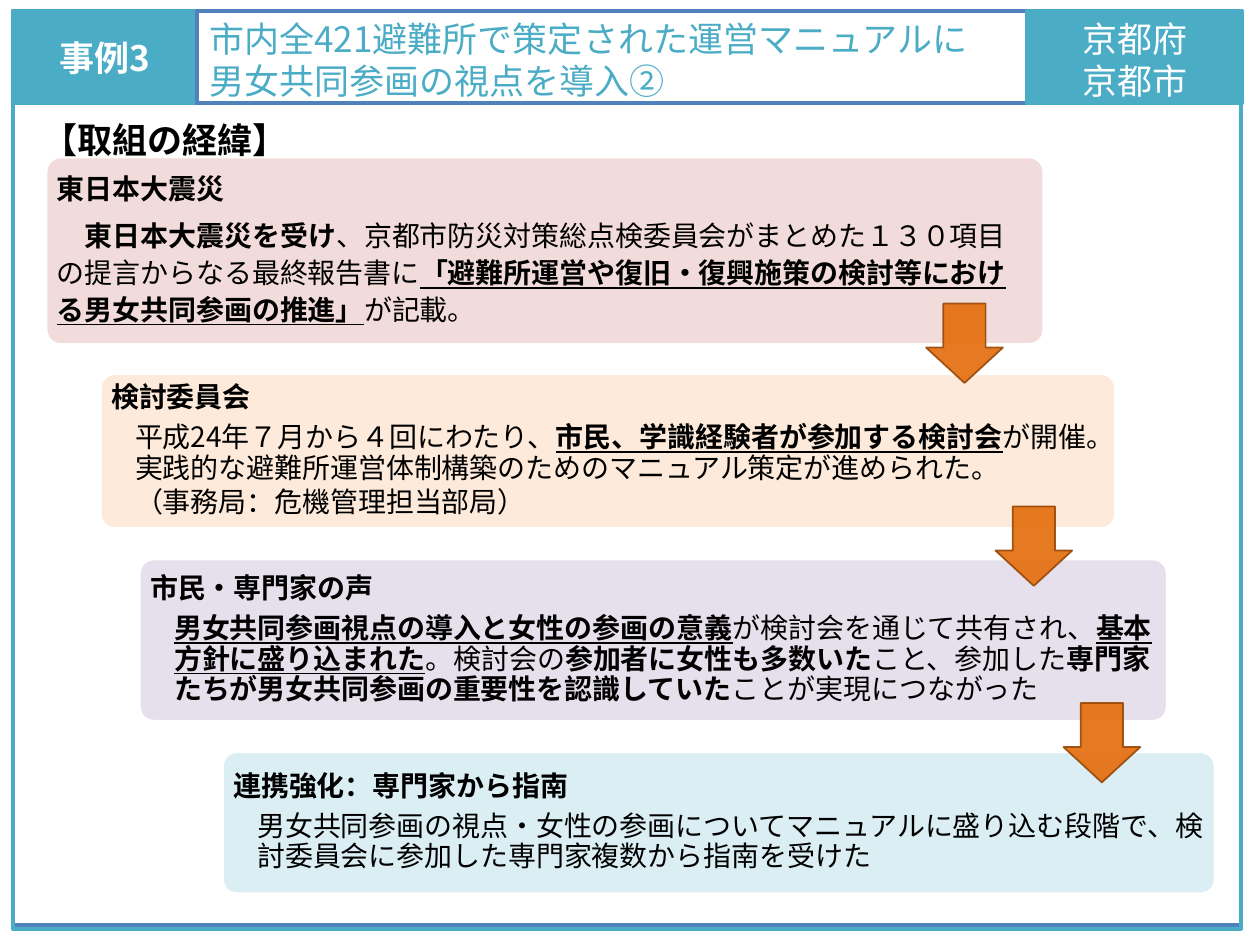
import pptx
import pptx.util
import pptx.dml.color
import pptx.enum.shapes
import pptx.enum.text
import pptx.oxml
import pptx.oxml.ns

FONT = "Noto Sans CJK JP"
COLORS = {
    "teal": "4BACC6", "blue": "4F81BD", "white": "FFFFFF", "black": "000000",
    "pink": "F2DCDB", "peach": "FDEADA", "lilac": "E6E0EC", "aqua": "DBEEF4",
    "orange": "E46C0A", "brown": "984807",
}
SHAPES = pptx.enum.shapes.MSO_SHAPE
ALIGN = pptx.enum.text.PP_ALIGN
MIDDLE = pptx.enum.text.MSO_ANCHOR.MIDDLE

# Each stage: place in grid cells, fill, heading, body paragraphs.
# A span is (text, style), where b is bold and u is underlined.
STAGES = [
    ((3.7, 12.5, 79.1, 14.8), "pink", "東日本大震災", [
        [("東日本大震災を受け", "b"),
         ("、京都市防災対策総点検委員会がまとめた１３０項目の提言からなる最終報告書に", ""),
         ("「避難所運営や復旧・復興施策の検討等における男女共同参画の推進」", "bu"),
         ("が記載。", "")]]),
    ((8, 29.7, 80.5, 12.2), "peach", "検討委員会", [
        [("平成24年７月から４回にわたり、", ""),
         ("市民、学識経験者が参加する検討会", "bu"),
         ("が開催。実践的な避難所運営体制構築のためのマニュアル策定が進められた。", "")],
        [("（事務局：危機管理担当部局）", "")]]),
    ((11.1, 44.4, 81.5, 12.8), "lilac", "市民・専門家の声", [
        [("男女共同参画視点の導入と女性の参画の意義", "bu"),
         ("が検討会を通じて共有され、", ""),
         ("基本方針に盛り込まれた", "bu"),
         ("。検討会の", ""),
         ("参加者に女性も多数いた", "b"),
         ("こと、参加した", ""),
         ("専門家たちが男女共同参画の重要性を認識していた", "b"),
         ("ことが実現につながった", "")]]),
    ((17.7, 59.7, 78.7, 11.2), "aqua", "連携強化：専門家から指南", [
        [("男女共同参画の視点・女性の参画についてマニュアルに盛り込む段階で、"
          "検討委員会に参加した専門家複数から指南を受けた", "")]]),
]
ARROWS = [(73.5, 24.1), (79, 40.2), (84.4, 55.8)]


def cells(*counts):
    """Lengths on a grid of 100 columns by 75 rows."""
    return [pptx.util.Inches(count / 10) for count in counts]


def rgb(name):
    return pptx.dml.color.RGBColor.from_string(COLORS[name])


def style_span(span, size, color, style=""):
    font = span.font
    font.name, font.size = FONT, pptx.util.Pt(size)
    font.color.rgb = rgb(color)
    font.bold, font.underline = "b" in style, "u" in style
    east = pptx.oxml.parse_xml(
        f'<a:ea {pptx.oxml.ns.nsdecls("a")} typeface="{FONT}"/>')
    font._element.find(pptx.oxml.ns.qn("a:latin")).addnext(east)


def paint(shape, fill, line, width):
    if fill:
        shape.fill.solid()
        shape.fill.fore_color.rgb = rgb(fill)
    else:
        shape.fill.background()
    shape.line.color.rgb = rgb(line)
    shape.line.width = pptx.util.Pt(width)


def add_shape(page, kind, place, fill, line, width=2.25):
    shape = page.shapes.add_shape(kind, *cells(*place))
    shape.shadow.inherit = False
    paint(shape, fill, line, width)
    return shape


def set_margins(frame, left, top, right, bottom):
    (frame.margin_left, frame.margin_top,
     frame.margin_right, frame.margin_bottom) = cells(left, top, right, bottom)


def set_label(shape, text, size, color, style="", align=ALIGN.CENTER):
    frame = shape.text_frame
    frame.text = text
    frame.word_wrap = True
    frame.vertical_anchor = MIDDLE
    for para in frame.paragraphs:
        para.alignment = align
        for span in para.runs:
            style_span(span, size, color, style)


def add_stage(page, place, fill, heading, body, opening):
    box = add_shape(page, SHAPES.ROUNDED_RECTANGLE, place, fill, "white", 1)
    box.adjustments[0] = 1.1 / place[3]
    set_label(box, heading, 16, "black", "b", ALIGN.LEFT)
    frame = box.text_frame
    set_margins(frame, 0.5, 0.7, 0.5, 0.7)
    frame.paragraphs[0].line_spacing = 0.9
    frame.paragraphs[0].space_after = pptx.util.Pt(5.6)
    for spans in body:
        para = frame.add_paragraph()
        para.alignment = ALIGN.LEFT
        para.line_spacing = 1.1 if opening else 0.9
        para.space_after = pptx.util.Pt(0 if opening else 2.4)
        # The opening stage indents its first line, the others the whole text
        layout = para._p.get_or_add_pPr()
        left, first = cells(0, 2.22) if opening else cells(1.9, 0)
        layout.set("marL", str(left))
        layout.set("indent", str(first))
        for text, style in spans:
            span = para.add_run()
            span.text = text
            style_span(span, 16, "black", style)


def add_arrow(page, left, top):
    arrow = add_shape(page, SHAPES.DOWN_ARROW, (left, top, 6.1, 6.3),
                      "orange", "brown", 1)
    arrow.adjustments[0], arrow.adjustments[1] = 0.55, 0.46
    for color in arrow._element.spPr.iter(pptx.oxml.ns.qn("a:srgbClr")):
        color.append(pptx.oxml.parse_xml(
            f'<a:alpha {pptx.oxml.ns.nsdecls("a")} val="90000"/>'))


def add_header(page):
    badge = add_shape(page, SHAPES.RECTANGLE, (1, 0.9, 14.6, 7.3), "teal", "teal")
    set_label(badge, "事例3", 20, "white", "b")

    title = page.shapes.title
    title.left, title.top, title.width, title.height = cells(15.6, 0.9, 82.9, 7.3)
    paint(title, None, "blue", 2.25)
    set_label(title, "市内全421避難所で策定された運営マニュアルに\n"
              "男女共同参画の視点を導入②", 20, "teal", align=ALIGN.LEFT)
    title.text_frame.auto_size = pptx.enum.text.MSO_AUTO_SIZE.NONE
    # Bring the title in front of the page frame
    title._element.getparent().append(title._element)

    city = add_shape(page, SHAPES.RECTANGLE, (81.5, 0.9, 17.1, 7.3), "teal", "teal")
    set_label(city, "京都府\n京都市", 20, "white")
    for shape in (title, city):
        set_margins(shape.text_frame, 1, 0.8, 1, 0.5)


def main():
    deck = pptx.Presentation()
    deck.slide_width, deck.slide_height = cells(100, 75)
    page = deck.slides.add_slide(deck.slide_layouts[5])

    # Inner frame and the stages
    add_shape(page, SHAPES.RECTANGLE, (1, 0.9, 97.5, 72.5), None, "blue")
    for number, stage in enumerate(STAGES):
        add_stage(page, *stage, opening=number == 0)

    # Section heading
    section = page.shapes.add_textbox(*cells(2.4, 8.9, 80, 4.4))
    set_label(section, "【取組の経緯】", 20, "black", "b", ALIGN.LEFT)
    section.text_frame.vertical_anchor = pptx.enum.text.MSO_ANCHOR.TOP

    # Arrows from stage to stage
    for left, top in ARROWS:
        add_arrow(page, left, top)

    # Outer frame and header band
    add_shape(page, SHAPES.RECTANGLE, (1, 0.9, 97.5, 72.8), None, "teal")
    add_header(page)
    deck.save("out.pptx")


if __name__ == "__main__":
    main()
